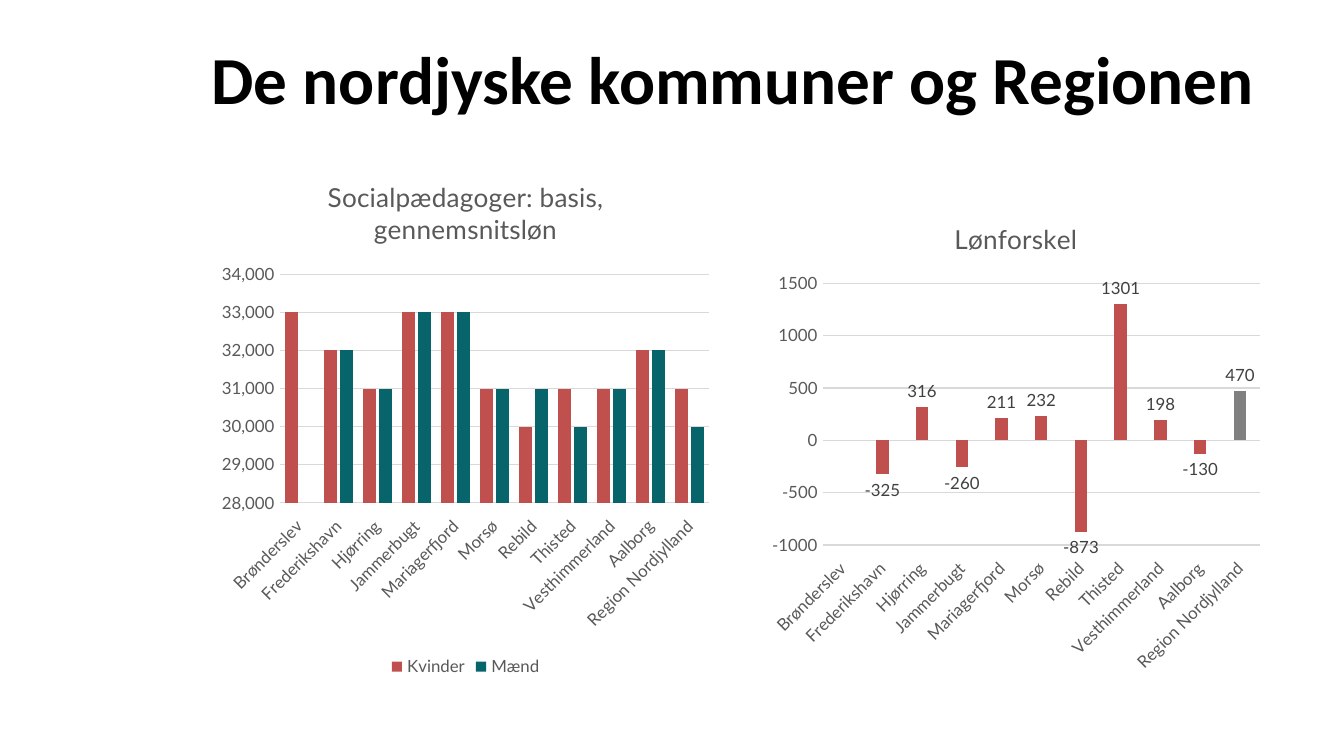
import pptx
import pptx.chart.data
import pptx.dml.color
import pptx.enum.chart
import pptx.enum.text
import pptx.oxml
import pptx.util

Cm = pptx.util.Cm
Pt = pptx.util.Pt
RED, TEAL, GREY = "C0504D", "07646A", "808080"
TEXT, LABEL, GRID = "595959", "404040", "D9D9D9"
PLACES = ["Brønderslev", "Frederikshavn", "Hjørring", "Jammerbugt", "Mariagerfjord", "Morsø",
          "Rebild", "Thisted", "Vesthimmerland", "Aalborg", "Region Nordjylland"]
WOMEN = [33000, 32000, 31000, 33000, 33000, 31000, 30000, 31000, 31000, 32000, 31000]
MEN = [None, 32000, 31000, 33000, 33000, 31000, 31000, 30000, 31000, 32000, 30000]
DIFFERENCE = [None, -325, 316, -260, 211, 232, -873, 1301, 198, -130, 470]


def color(value):
    """Return the colour for a hex string."""
    return pptx.dml.color.RGBColor.from_string(value)


def style_font(font, size, value, name="Lato", bold=False):
    """Set size, colour, face and weight of a font."""
    font.size, font.name, font.bold = Pt(size), name, bold
    font.color.rgb = color(value)


def style_line(line):
    """Give an axis or grid line its thin grey look."""
    line.width = Pt(0.75)
    line.color.rgb = color(GRID)


def fill_series(target, value):
    """Fill a series or a point with a solid colour."""
    target.format.fill.solid()
    target.format.fill.fore_color.rgb = color(value)


def style_axes(chart, scale, number_format):
    """Style both axes and set the value scale."""
    for axis in (chart.category_axis, chart.value_axis):
        axis.major_tick_mark = axis.minor_tick_mark = pptx.enum.chart.XL_TICK_MARK.NONE
        style_font(axis.tick_labels.font, 9, TEXT)
    category, value = chart.category_axis, chart.value_axis
    category.tick_label_position = pptx.enum.chart.XL_TICK_LABEL_POSITION.LOW
    style_line(category.format.line)
    body = category._element.find(pptx.oxml.ns.qn("c:txPr")).find(pptx.oxml.ns.qn("a:bodyPr"))
    body.set("rot", "-2700000")
    body.set("vert", "horz")
    value.minimum_scale, value.maximum_scale, value.major_unit = scale
    value.format.line.fill.background()
    style_line(value.major_gridlines.format.line)
    value.tick_labels.number_format = number_format
    value.tick_labels.number_format_is_linked = False


def add_columns(slide, box, title, series, scale, number_format, spacing):
    """Add a titled clustered column chart in the box and return it."""
    data = pptx.chart.data.CategoryChartData()
    data.categories = PLACES
    for name, values, fill in series:
        data.add_series(name, values)
    chart = slide.shapes.add_chart(
        pptx.enum.chart.XL_CHART_TYPE.COLUMN_CLUSTERED, *box, data).chart
    style_font(chart.font, 10, "000000")
    chart.has_title, chart.has_legend = True, False
    run = chart.chart_title.text_frame.paragraphs[0].add_run()
    run.text = title
    style_font(run.font, 14, TEXT)
    chart.chart_title.include_in_layout = False
    plot = chart.plots[0]
    plot.vary_by_categories = False
    plot.gap_width, plot.overlap = spacing
    for column, (name, values, fill) in zip(plot.series, series):
        fill_series(column, fill)
        column.invert_if_negative = False
    style_axes(chart, scale, number_format)
    return chart


def add_salary_chart(slide, box):
    """Add the average salary chart with its legend."""
    chart = add_columns(
        slide, box, "Socialpædagoger: basis, gennemsnitsløn",
        [("Kvinder", WOMEN, RED), ("Mænd", MEN, TEAL)],
        (28000, 34000, 1000), "#,##0", (75, -25))
    chart.has_legend = True
    chart.legend.position = pptx.enum.chart.XL_LEGEND_POSITION.BOTTOM
    chart.legend.include_in_layout = False
    style_font(chart.legend.font, 9, TEXT)


def add_difference_chart(slide, box):
    """Add the salary difference chart with value labels."""
    chart = add_columns(
        slide, box, "Lønforskel", [("Series 1", DIFFERENCE, RED)],
        (-1000, 1500, 500), "0", (219, -27))
    column = chart.plots[0].series[0]
    fill_series(column.points[len(PLACES) - 1], GREY)
    labels = column.data_labels
    labels.show_value = True
    labels.position = pptx.enum.chart.XL_LABEL_POSITION.OUTSIDE_END
    labels.number_format, labels.number_format_is_linked = "0", False
    style_font(labels.font, 9, LABEL)


def add_title(slide, box):
    """Move the title placeholder to the box and fill it."""
    shape = slide.shapes.title
    shape.left, shape.top, shape.width, shape.height = box
    frame = shape.text_frame
    frame.margin_left = frame.margin_top = frame.margin_right = frame.margin_bottom = 0
    frame.vertical_anchor = pptx.enum.text.MSO_ANCHOR.TOP
    frame.auto_size = pptx.enum.text.MSO_AUTO_SIZE.NONE
    frame.word_wrap = True
    paragraph = frame.paragraphs[0]
    paragraph.alignment = pptx.enum.text.PP_ALIGN.LEFT
    paragraph.line_spacing = Pt(42)
    run = paragraph.add_run()
    run.text = "De nordjyske kommuner og Regionen"
    style_font(run.font, 36, "000000", "Calibri", True)


def main():
    """Build and save the slide."""
    presentation = pptx.Presentation()
    presentation.slide_width, presentation.slide_height = Cm(25.4), Cm(14.29)
    slide = presentation.slides.add_slide(presentation.slide_layouts[5])
    left, width, bottom, chart_width = Cm(4), Cm(20), Cm(12.9), Cm(9.6)
    add_title(slide, (left, Cm(0.75), width, Cm(3)))
    top = Cm(2.94)
    add_salary_chart(slide, (left, top, chart_width, bottom - top))
    top = Cm(3.75)
    add_difference_chart(slide, (left + width - chart_width, top, chart_width, bottom - top))
    presentation.save("out.pptx")


if __name__ == "__main__":
    main()
